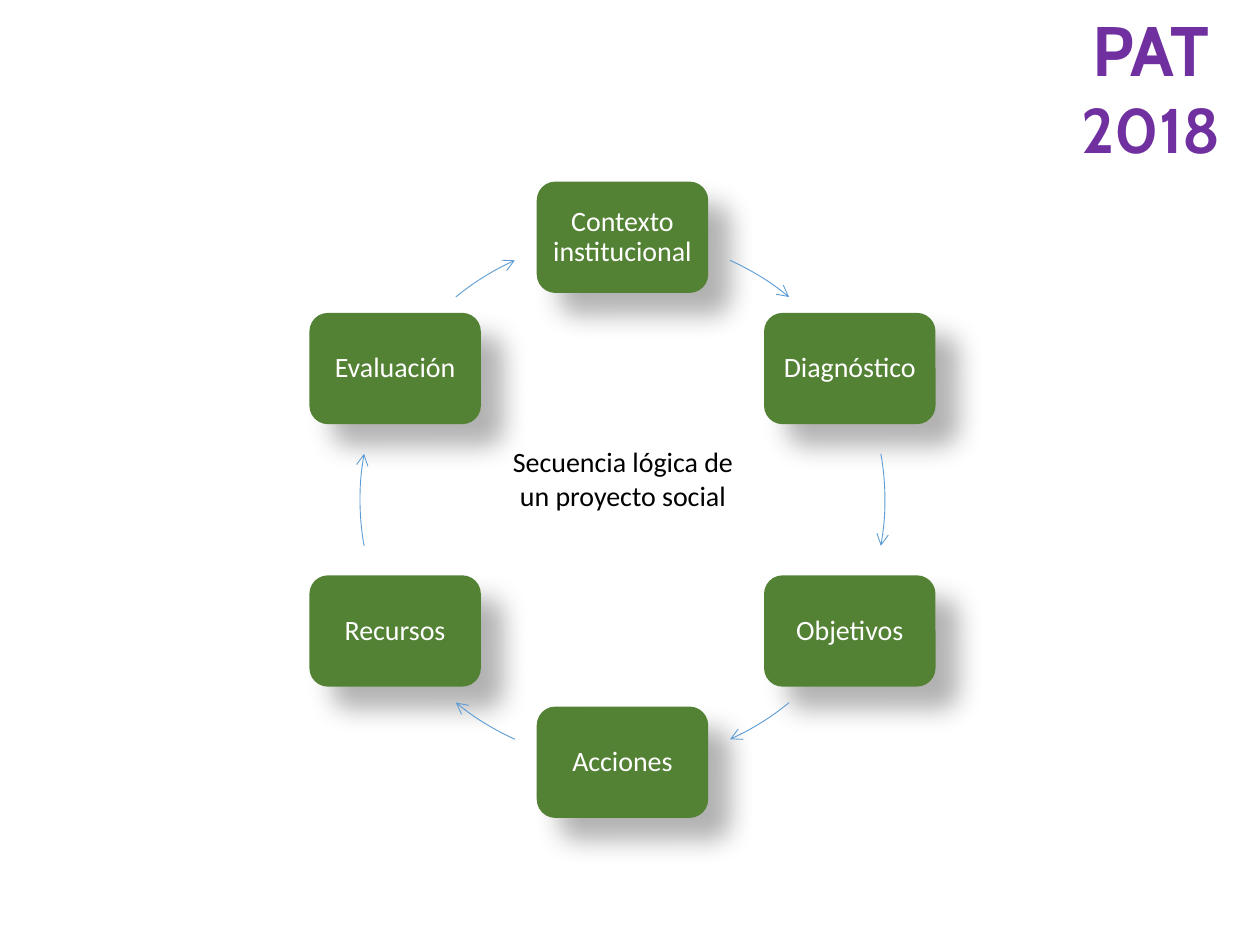
from dataclasses import dataclass
from math import cos, radians, sin

from lxml.etree import SubElement
from pptx import Presentation
from pptx.dml.color import RGBColor
from pptx.enum.shapes import MSO_SHAPE
from pptx.enum.text import MSO_ANCHOR, PP_ALIGN
from pptx.oxml.ns import qn
from pptx.util import Pt


@dataclass(frozen=True)
class Theme:
    purple: str = "7030A0"
    green: str = "548235"
    blue: str = "5B9BD5"
    white: str = "FFFFFF"
    black: str = "000000"
    heading_font: str = "Cabin"
    body_font: str = "Calibri"
    heading_size: float = 40
    year_size: float = 36
    body_size: float = 16


THEME = Theme()

# Cycle geometry, in points; angles run clockwise from the top
CENTER_X, CENTER_Y, RADIUS = 355.7, 285.6, 150
BOX_W, BOX_H = 98, 63.6
STEPS = ["Contexto institucional", "Diagnóstico", "Objetivos",
         "Acciones", "Recursos", "Evaluación"]
ARROWS = [(24.2, 39.4), (79.9, 100.1), (140.6, 155.8)]  # half a turn


def add_text(p, text, *, size=THEME.body_size, color=THEME.black,
             font=THEME.body_font, bold=False, spacing=None):
    p.alignment = PP_ALIGN.CENTER
    if spacing:
        p.line_spacing = spacing
    r = p.add_run()
    r.text = text
    r.font.size = Pt(size)
    r.font.name = font
    r.font.bold = bold
    r.font.color.rgb = RGBColor.from_string(color)


def add_box(s, left, top, width, height):
    tf = s.shapes.add_textbox(Pt(left), Pt(top), Pt(width), Pt(height)).text_frame
    tf.word_wrap = True
    return tf.paragraphs[0]


def add_shadow(sp):
    sp.shadow.inherit = False
    effects = sp._element.spPr.find(qn("a:effectLst"))
    shadow = SubElement(effects, qn("a:outerShdw"), blurRad=str(Pt(15)),
                        dist=str(Pt(18)), dir="2700000", algn="tl",
                        rotWithShape="0")
    color = SubElement(shadow, qn("a:srgbClr"), val=THEME.black)
    SubElement(color, qn("a:alpha"), val="30000")


def add_step(s, text, angle):
    x = CENTER_X + RADIUS * sin(radians(angle))
    y = CENTER_Y - RADIUS * cos(radians(angle))
    sp = s.shapes.add_shape(MSO_SHAPE.ROUNDED_RECTANGLE, Pt(x - BOX_W / 2),
                            Pt(y - BOX_H / 2), Pt(BOX_W), Pt(BOX_H))
    sp.fill.solid()
    sp.fill.fore_color.rgb = RGBColor.from_string(THEME.green)
    sp.line.fill.background()
    add_shadow(sp)
    tf = sp.text_frame
    tf.word_wrap = True
    tf.vertical_anchor = MSO_ANCHOR.MIDDLE
    tf.margin_left = tf.margin_right = tf.margin_top = tf.margin_bottom = Pt(5)
    add_text(tf.paragraphs[0], text, color=THEME.white, spacing=0.9)


def add_arc_arrow(s, start, end):
    sp = s.shapes.add_shape(MSO_SHAPE.ARC, Pt(CENTER_X - RADIUS),
                            Pt(CENTER_Y - RADIUS), Pt(2 * RADIUS), Pt(2 * RADIUS))
    # An arc measures from the right, in 60000ths of a degree over 100000
    for i, angle in enumerate((start, end)):
        sp.adjustments[i] = (angle - 90) % 360 * 0.6
    sp.shadow.inherit = False
    sp.fill.background()
    sp.line.color.rgb = RGBColor.from_string(THEME.blue)
    sp.line.width = Pt(0.5)
    SubElement(sp.line._get_or_add_ln(), qn("a:tailEnd"), type="arrow")


def main():
    prs = Presentation()
    prs.slide_width, prs.slide_height = Pt(720), Pt(540)
    s = prs.slides.add_slide(prs.slide_layouts[6])

    # Corner heading
    p = add_box(s, 595.4, 0, 124.6, 99.4)
    heading = dict(color=THEME.purple, font=THEME.heading_font, bold=True)
    add_text(p, "PAT", size=THEME.heading_size, **heading)
    add_text(p, " 2018", size=THEME.year_size, **heading)

    # Cycle of steps
    for i, step in enumerate(STEPS):
        add_step(s, step, i * 360 / len(STEPS))
    for turn in (0, 180):
        for start, end in ARROWS:
            add_arc_arrow(s, start + turn, end + turn)

    # Caption in the middle
    add_text(add_box(s, 285, 250.6, 142, 46), "Secuencia lógica de un proyecto social")

    prs.save("out.pptx")


if __name__ == "__main__":
    main()
